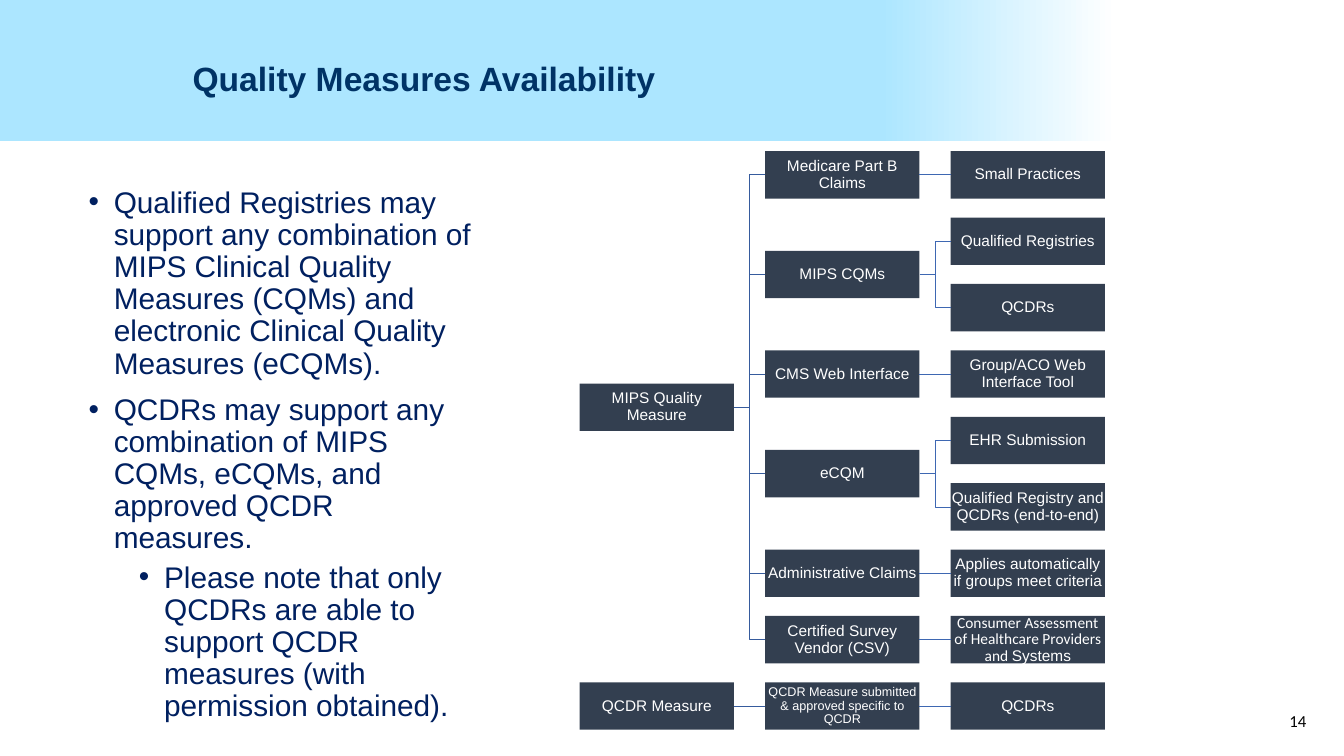
from dataclasses import dataclass

from lxml import etree
from pptx import Presentation
from pptx.dml.color import RGBColor as Rgb
from pptx.enum import shapes as kinds, text as txt
from pptx.oxml import ns
from pptx.util import Inches, Pt


@dataclass(frozen=True)
class Theme:
    band: str = "ACE6FF"
    white: str = "FFFFFF"
    title: str = "003366"
    body: str = "002060"
    node: str = "333F50"
    trunk: str = "365B9D"
    twig: str = "3E67B2"
    black: str = "000000"
    font: str = "Arial"
    alt: str = "Calibri"
    head: float = 24
    main: float = 21.3
    page: float = 12
    label: float = 11
    small: float = 9


T = Theme()

POINTS = [
    (0, "Qualified Registries may support any combination of MIPS Clinical "
        "Quality Measures (CQMs) and electronic Clinical Quality Measures (eCQMs)."),
    (0, "QCDRs may support any combination of MIPS CQMs, eCQMs, and approved "
        "QCDR measures."),
    (1, "Please note that only QCDRs are able to support QCDR measures "
        "(with permission obtained)."),
]

# Each node is (runs, children); a run is (words, size, font).


def node(words, *kids, size=T.label):
    return [(words, size, T.font)], kids


SURVEY = ([("Consumer Assessment of Healthcare Providers and ", T.label, T.alt),
           ("Systems", T.label, T.font)], ())
TREES = [
    node("MIPS Quality Measure",
         node("Medicare Part B Claims", node("Small Practices")),
         node("MIPS CQMs", node("Qualified Registries"), node("QCDRs")),
         node("CMS Web Interface", node("Group/ACO Web Interface Tool")),
         node("eCQM", node("EHR Submission"),
              node("Qualified Registry and QCDRs (end-to-end)")),
         node("Administrative Claims",
              node("Applies automatically if groups meet criteria")),
         node("Certified Survey Vendor (CSV)", SURVEY)),
    node("QCDR Measure",
         node("QCDR Measure submitted & approved specific to QCDR",
              node("QCDRs"), size=T.small)),
]


def add_run(para, words, size, color, font=T.font, bold=False):
    run = para.add_run()
    run.text = words
    run.font.size, run.font.name, run.font.bold = Pt(size), font, bold
    run.font.color.rgb = Rgb.from_string(color)


def set_frame(frame, inset=None, anchor=txt.MSO_ANCHOR.MIDDLE):
    """Wrap the text, anchor it and, if given, set one inset on all sides."""
    frame.word_wrap = True
    frame.auto_size = txt.MSO_AUTO_SIZE.NONE
    frame.vertical_anchor = anchor
    if inset is not None:
        frame.margin_left = frame.margin_right = Inches(inset)
        frame.margin_top = frame.margin_bottom = Inches(inset)


def add_rect(slide, box):
    rect = slide.shapes.add_shape(kinds.MSO_SHAPE.RECTANGLE, *map(Inches, box))
    rect.shadow.inherit = False
    rect.line.fill.background()
    return rect


def add_header(slide, box):
    left, top, width, height = box
    band = add_rect(slide, box)
    band.fill.gradient()
    band.fill.gradient_angle = 0
    for stop, place, color in zip(band.fill.gradient_stops, (0.78, 0.99),
                                  (T.band, T.white)):
        stop.position = place
        stop.color.rgb = Rgb.from_string(color)

    title = slide.shapes.title
    title._element.addprevious(band._element)
    title.left, title.top = Inches(left + 1.91), Inches(top + 0.15)
    title.width, title.height = Inches(7.69), Inches(1.29)
    set_frame(title.text_frame, 0)
    para = title.text_frame.paragraphs[0]
    para.alignment = txt.PP_ALIGN.LEFT
    para.line_spacing = 0.9
    add_run(para, "Quality Measures Availability", T.head, T.title, bold=True)


def add_bullet(para, level):
    props = para._p.get_or_add_pPr()
    props.set("marL", str(Inches(0.25 + 0.5 * level)))
    props.set("indent", str(Inches(-0.25)))
    etree.SubElement(props, ns.qn("a:buFont")).set("typeface", T.font)
    etree.SubElement(props, ns.qn("a:buChar")).set("char", "•")


def add_points(slide, box):
    frame = slide.shapes.add_textbox(*map(Inches, box)).text_frame
    set_frame(frame, anchor=txt.MSO_ANCHOR.TOP)
    for i, (level, words) in enumerate(POINTS):
        para = frame.add_paragraph() if i else frame.paragraphs[0]
        para.level = level
        add_bullet(para, level)
        para.line_spacing = 0.9
        para.space_before = Pt((5 if level else 10) if i else 0)
        add_run(para, words, T.main, T.body)


def add_node(slide, box, runs):
    rect = add_rect(slide, box)
    rect.fill.solid()
    rect.fill.fore_color.rgb = Rgb.from_string(T.node)
    set_frame(rect.text_frame, 0.01)
    para = rect.text_frame.paragraphs[0]
    para.alignment = txt.PP_ALIGN.CENTER
    para.line_spacing = 0.9
    for words, size, font in runs:
        add_run(para, words, size, T.white, font)
    return rect


def join(slide, start, end, color):
    level = abs(start.top - end.top) < Inches(0.01)
    kind = kinds.MSO_CONNECTOR.STRAIGHT if level else kinds.MSO_CONNECTOR.ELBOW
    line = slide.shapes.add_connector(kind, 0, 0, 0, 0)
    line.begin_connect(start, 3)
    line.end_connect(end, 1)
    line.line.color.rgb = Rgb.from_string(color)
    line.line.width = Pt(0.5)
    etree.SubElement(line._element.spPr, ns.qn("a:effectLst"))


def count(tree):
    """Number of leaves under a node."""
    return sum(map(count, tree[1])) or 1


def add_trees(slide, box):
    """Stack the leaves evenly; centre each parent between its outer children."""
    left, top, width, height = box
    wide, tall = 1.53, 0.47
    step = (width - wide) / 2
    pitch = (height - tall) / (sum(map(count, TREES)) - 1)

    def grow(tree, depth, row):
        runs, kids = tree
        shapes, rows, first = [], [], row
        for kid in kids:
            shape, mid = grow(kid, depth + 1, first)
            shapes.append(shape)
            rows.append(mid)
            first += count(kid)
        mid = (rows[0] + rows[-1]) / 2 if rows else row
        rect = add_node(slide, (left + depth * step, top + mid * pitch,
                                wide, tall), runs)
        for shape in shapes:
            join(slide, rect, shape, T.twig if depth else T.trunk)
        return rect, mid

    row = 0
    for tree in TREES:
        grow(tree, 0, row)
        row += count(tree)


def add_page(slide, box):
    frame = slide.shapes.add_textbox(*map(Inches, box)).text_frame
    set_frame(frame)
    add_run(frame.paragraphs[0], "14", T.page, T.black, T.alt)


def main():
    deck = Presentation()
    deck.slide_width, deck.slide_height = Inches(13.33), Inches(7.5)
    slide = deck.slides.add_slide(deck.slide_layouts.get_by_name("Title Only"))
    add_header(slide, (0, 0, 11.19, 1.4))
    add_points(slide, (0.78, 1.81, 4.08, 5.44))
    add_trees(slide, (5.75, 1.5, 5.21, 5.74))
    add_page(slide, (12.69, 6.95, 0.57, 0.4))
    deck.save("out.pptx")


if __name__ == "__main__":
    main()
